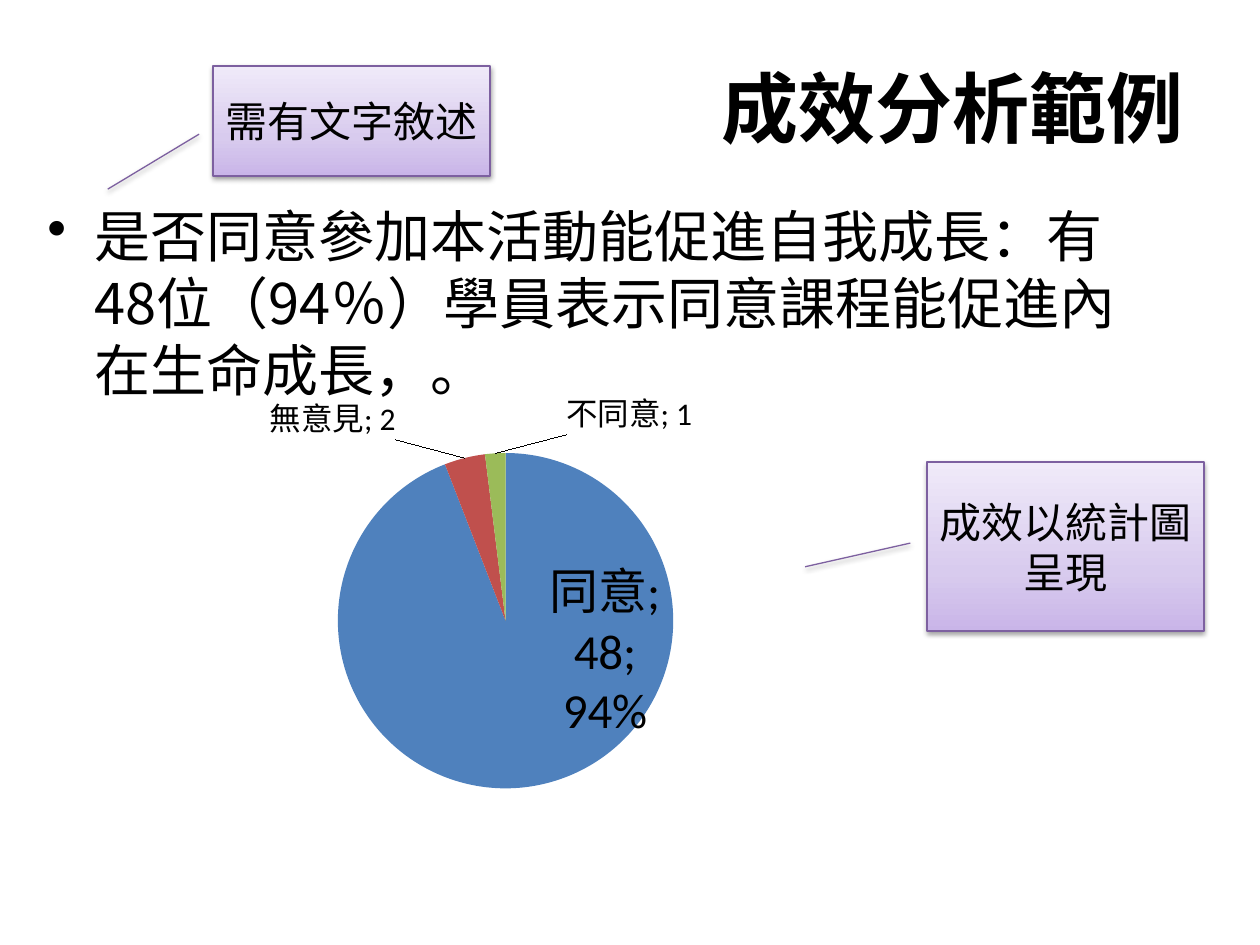
from dataclasses import dataclass

from lxml.etree import SubElement
from pptx import Presentation
from pptx.chart.data import CategoryChartData
from pptx.dml.color import RGBColor as Rgb
from pptx.enum.chart import XL_CHART_TYPE as ChartType, XL_LABEL_POSITION as LabelPosition
from pptx.enum.shapes import MSO_SHAPE as Shape
from pptx.enum.text import MSO_ANCHOR as Anchor, PP_ALIGN as Align
from pptx.oxml import parse_xml
from pptx.oxml.ns import nsdecls, qn
from pptx.util import Emu, Pt

PX = 914400 // 126


@dataclass(frozen=True)
class Theme:
    """Colours, fonts and type sizes of the slide."""
    text: str = "000000"
    border: str = "7D60A0"
    gradient: tuple = ((0, "C9B5E8"), (35, "D8CBEE"), (100, "F0EAF9"))
    slices: tuple = ("4F81BD", "C0504D", "9BBB59")
    font: str = "Noto Sans CJK SC"
    chart_font: str = "Calibri"
    title: int = 44
    body: int = 32
    callout: int = 24
    label: int = 18
    main_label: int = 28


THEME = Theme()


def px(*lengths):
    """Turn pixel lengths into EMU."""
    return [Emu(length * PX) for length in lengths]


def style_font(font, size, name=THEME.font, bold=False):
    """Set typeface, size, weight and colour of a font."""
    font.name, font.size, font.bold = name, Pt(size), bold
    font.color.rgb = Rgb.from_string(THEME.text)


def write_text(frame, text, size, align=Align.CENTER, anchor=Anchor.MIDDLE, bold=False):
    """Fill a frame with one styled paragraph and return it."""
    frame.word_wrap = True
    frame.vertical_anchor = anchor
    para = frame.paragraphs[0]
    para.text, para.alignment = text, align
    style_font(para.font, size, bold=bold)
    return para


def add_title(page, box, text):
    """Add the bold heading."""
    frame = page.shapes.add_textbox(*px(*box)).text_frame
    write_text(frame, text, THEME.title, bold=True)


def add_bullet(page, box, text):
    """Add a bulleted paragraph with a hanging indent."""
    frame = page.shapes.add_textbox(*px(*box)).text_frame
    para = write_text(frame, text, THEME.body, Align.LEFT, Anchor.TOP)
    para.space_before = Pt(THEME.body * 0.2)
    props = para._p.get_or_add_pPr()
    indent = px(47)[0]
    props.set("marL", str(indent))
    props.set("indent", str(-indent))
    bullet = parse_xml(f'<a:buChar {nsdecls("a")} char="•"/>')
    props.find(qn("a:defRPr")).addprevious(bullet)


def add_callout(page, box, text, pointer):
    """Add a shaded callout with a pointer line."""
    shape = page.shapes.add_shape(Shape.LINE_CALLOUT_1, *px(*box))
    for index, value in enumerate(pointer):
        shape.adjustments[index] = value
    shape.line.color.rgb = Rgb.from_string(THEME.border)
    shape.line.width = Pt(0.75)
    stops = "".join(
        f'<a:gs pos="{percent * 1000}"><a:srgbClr val="{color}"/></a:gs>'
        for percent, color in THEME.gradient)
    outline = shape._element.spPr.find(qn("a:ln"))
    outline.addprevious(parse_xml(
        f'<a:gradFill {nsdecls("a")} rotWithShape="1"><a:gsLst>{stops}</a:gsLst>'
        '<a:lin ang="16200000" scaled="0"/></a:gradFill>'))
    outline.addnext(parse_xml(
        f'<a:effectLst {nsdecls("a")}><a:outerShdw blurRad="{Pt(3.1)}" dist="{Pt(1.6)}" '
        'dir="5400000" rotWithShape="0"><a:srgbClr val="000000"><a:alpha val="38000"/>'
        '</a:srgbClr></a:outerShdw></a:effectLst>'))
    write_text(shape.text_frame, text, THEME.callout)


def manual_layout(x, y, extra=""):
    """Return a chart layout element."""
    return parse_xml(
        f'<c:layout {nsdecls("c")}><c:manualLayout>{extra and "<c:layoutTarget val=%r/>" % "inner"}'
        f'{extra and "<c:xMode val=%r/><c:yMode val=%r/>" % ("edge", "edge")}'
        f'<c:x val="{x}"/><c:y val="{y}"/>{extra}</c:manualLayout></c:layout>')


def style_label(point, size, position, offset, percent=False):
    """Show category and value beside one slice."""
    label = point.data_label
    style_font(label.font, size, THEME.chart_font)
    label.position = position
    element = label._dLbl
    element.find(qn("c:idx")).addnext(manual_layout(*offset))
    element.find(qn("c:showCatName")).set("val", "1")
    element.find(qn("c:showPercent")).set("val", str(int(percent)))
    SubElement(element, qn("c:separator")).text = "; "


def add_pie(page, box, counts, labels):
    """Add the pie chart of answers."""
    data = CategoryChartData()
    data.categories = list(counts)
    data.add_series("Series 1", list(counts.values()))
    chart = page.shapes.add_chart(ChartType.PIE, *px(*box), data).chart
    chart.has_legend = chart.has_title = False
    style_font(chart.font, THEME.label, THEME.chart_font)
    plot = chart.plots[0]
    plot.vary_by_categories = True
    series = plot.series[0]
    shared = series.data_labels
    shared.show_value = shared.show_category_name = True
    leader = shared._element.find(qn("c:showLeaderLines"))
    if leader is None:
        leader = SubElement(shared._element, qn("c:showLeaderLines"))
    leader.set("val", "1")
    for index, (color, label) in enumerate(zip(THEME.slices, labels)):
        point = series.points[index]
        point.format.fill.solid()
        point.format.fill.fore_color.rgb = Rgb.from_string(color)
        style_label(point, *label)
    area = chart._chartSpace.chart.plotArea
    for layout in area.findall(qn("c:layout")):
        area.remove(layout)
    area.insert(0, manual_layout(0.29, 0.12, '<c:w val="0.4"/><c:h val="0.6"/>'))


def main():
    """Build and save the slide."""
    deck = Presentation()
    deck.slide_width, deck.slide_height = px(1260, 945)
    page = deck.slides.add_slide(deck.slide_layouts[6])
    add_title(page, (709, 38, 488, 137), "成效分析範例")
    add_bullet(page, (35, 195, 1134, 624),
               "是否同意參加本活動能促進自我成長：有48位（94％）學員表示同意課程能促進內在生命成長，。")
    add_pie(page, (94, 386, 840, 559), {"同意": 48, "無意見": 2, "不同意": 1}, (
        (THEME.main_label, LabelPosition.CENTER, (0.1, -0.1), True),
        (THEME.label, LabelPosition.OUTSIDE_END, (-0.08, -0.02)),
        (THEME.label, LabelPosition.OUTSIDE_END, (0.16, -0.02))))
    add_callout(page, (213, 66, 277, 110), "需有文字敘述", (0.62, -0.05, 1.12, -0.38))
    add_callout(page, (927, 462, 277, 169), "成效以統計圖呈現", (0.48, -0.06, 0.62, -0.44))


    deck.save("out.pptx")


if __name__ == "__main__":
    main()
